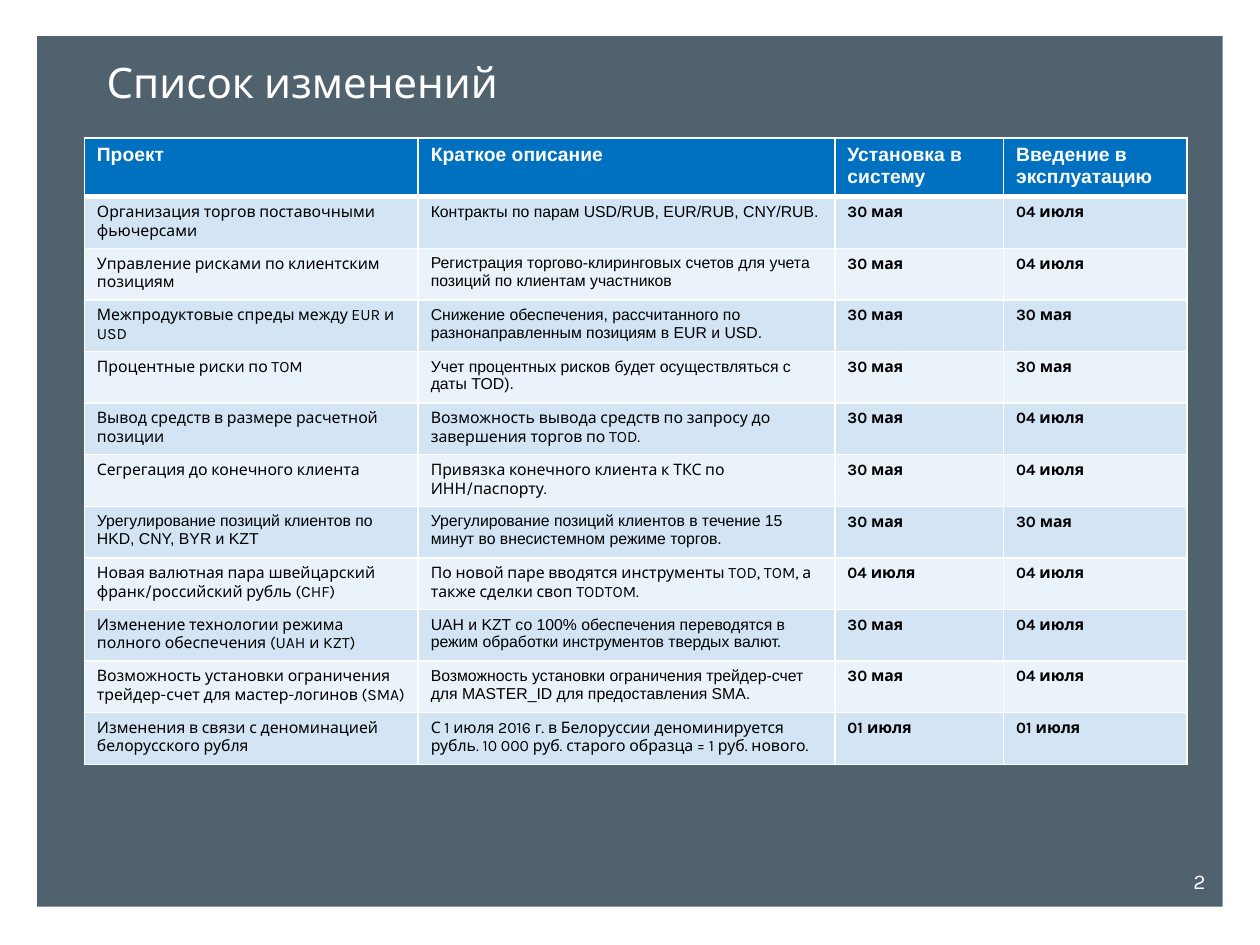
"""Build the slide listing system changes and their rollout dates."""
from lxml.etree import SubElement
from pptx import Presentation
from pptx.dml.color import RGBColor
from pptx.enum.shapes import MSO_SHAPE
from pptx.enum.text import MSO_ANCHOR, MSO_AUTO_SIZE, PP_ALIGN
from pptx.oxml.ns import qn
from pptx.util import Cm, Pt

TITLE = "Список изменений"
PAGE = "2"
HEADERS = ("Проект", "Краткое описание", "Установка в систему", "Введение в эксплуатацию")
MAY, JUNE_END, JULY = "30 мая", "01 июля", "04 июля"
CHANGES = [
    ("Организация торгов поставочными фьючерсами",
     "Контракты по парам USD/RUB, EUR/RUB, CNY/RUB.", MAY, JULY),
    ("Управление рисками по клиентским позициям",
     "Регистрация торгово-клиринговых счетов для учета позиций по клиентам участников", MAY, JULY),
    ("Межпродуктовые спреды между EUR и USD",
     "Снижение обеспечения, рассчитанного по разнонаправленным позициям в EUR и USD.", MAY, MAY),
    ("Процентные риски по TOM",
     "Учет процентных рисков будет осуществляться с даты TOD).", MAY, MAY),
    ("Вывод средств в размере расчетной позиции",
     "Возможность вывода средств по запросу до завершения торгов по TOD.", MAY, JULY),
    ("Сегрегация до конечного клиента",
     "Привязка конечного клиента к ТКС по ИНН/паспорту.", MAY, JULY),
    ("Урегулирование позиций клиентов по HKD, CNY, BYR и KZT",
     "Урегулирование позиций клиентов в течение 15 минут во внесистемном режиме торгов.", MAY, MAY),
    ("Новая валютная пара швейцарский франк/российский рубль (CHF)",
     "По новой паре вводятся инструменты TOD, TOM, а также сделки своп TODTOM.", JULY, JULY),
    ("Изменение технологии режима полного обеспечения (UAH и KZT)",
     "UAH и KZT со 100% обеспечения переводятся в режим обработки инструментов твердых валют.",
     MAY, JULY),
    ("Возможность установки ограничения трейдер-счет для мастер-логинов (SMA)",
     "Возможность установки ограничения трейдер-счет для MASTER_ID для предоставления SMA.",
     MAY, JULY),
    ("Изменения в связи с деноминацией белорусского рубля",
     "С 1 июля 2016 г. в Белоруссии деноминируется рубль. "
     "10 000 руб. старого образца = 1 руб. нового.", JUNE_END, JUNE_END),
]
ARIAL_CELLS = {(7, 0)} | {(row, 1) for row in (1, 2, 3, 4, 7, 9, 10)}
COL_WIDTHS = (6.73, 8.4, 3.4, 3.7)
ROW_HEIGHT = 1.04
THEME = {
    "font": "Karla", "table_font": "Arial",
    "title": 24, "page": 12, "header": 11, "body": 9,
    "panel": "51626F", "light": "FFFFFF", "dark": "000000",
    "head_fill": "0070C0", "bands": ("D3E4F5", "EAF2FA"),
    "rule": 1, "head_rule": 3,
}


def paint(shape, color):
    shape.fill.solid()
    shape.fill.fore_color.rgb = RGBColor.from_string(color)


def style(tf, size, color, font=THEME["font"], bold=False):
    for r in tf.paragraphs[0].runs:
        r.font.name, r.font.size, r.font.bold = font, Pt(size), bold
        r.font.color.rgb = RGBColor.from_string(color)


def set_borders(cell, top, bottom):
    tc_pr = cell._tc.get_or_add_tcPr()
    rule = THEME["rule"]
    for side, width in (("L", rule), ("R", rule), ("T", top), ("B", bottom)):
        ln = SubElement(tc_pr, qn(f"a:ln{side}"), w=str(Pt(width)))
        fill = SubElement(ln, qn("a:solidFill"))
        SubElement(fill, qn("a:srgbClr"), val=THEME["light"])


def add_panel(s):
    sp = s.shapes.add_shape(MSO_SHAPE.RECTANGLE, Cm(0.75), Cm(0.73), Cm(23.9), Cm(17.55))
    sp.shadow.inherit = False
    paint(sp, THEME["panel"])
    sp.line.fill.background()
    sp.element.getparent().insert(2, sp.element)


def add_title(s):
    sp = s.shapes.title
    sp.left, sp.top, sp.width, sp.height = Cm(1.1), Cm(1.12), Cm(15), Cm(1.6)
    tf = sp.text_frame
    tf.text = TITLE
    tf.auto_size = MSO_AUTO_SIZE.NONE
    tf.vertical_anchor = MSO_ANCHOR.TOP
    tf.margin_left = Cm(1.05)
    tf.paragraphs[0].alignment = PP_ALIGN.LEFT
    tf.paragraphs[0].line_spacing = 0.9
    style(tf, THEME["title"], THEME["light"])


def add_page_number(s):
    tf = s.shapes.add_textbox(Cm(23.3), Cm(17.2), Cm(1), Cm(1)).text_frame
    tf.text = PAGE
    tf.word_wrap = True
    tf.vertical_anchor = MSO_ANCHOR.MIDDLE
    tf.margin_right = tf.margin_bottom = 0
    tf.paragraphs[0].alignment = PP_ALIGN.RIGHT
    style(tf, THEME["page"], THEME["light"])


def add_changes(s):
    rows = [HEADERS, *CHANGES]
    table = s.shapes.add_table(len(rows), len(HEADERS), Cm(1.7), Cm(2.78),
                               Cm(sum(COL_WIDTHS)), Cm(ROW_HEIGHT * len(rows))).table
    for col, width in zip(table.columns, COL_WIDTHS):
        col.width = Cm(width)
    for i, texts in enumerate(rows):
        table.rows[i].height = Cm(ROW_HEIGHT)
        for j, text in enumerate(texts):
            cell = table.cell(i, j)
            cell.text_frame.text = text
            set_borders(cell, THEME["head_rule" if i == 1 else "rule"],
                        THEME["head_rule" if i == 0 else "rule"])
            if i == 0:
                paint(cell, THEME["head_fill"])
                style(cell.text_frame, THEME["header"], THEME["light"], THEME["table_font"], True)
            else:
                paint(cell, THEME["bands"][(i - 1) % 2])
                font = THEME["table_font" if (i, j) in ARIAL_CELLS else "font"]
                style(cell.text_frame, THEME["body"], THEME["dark"], font, j >= 2)


def main():
    prs = Presentation()
    prs.slide_width, prs.slide_height = Cm(25.4), Cm(19.05)
    s = prs.slides.add_slide(prs.slide_layouts.get_by_name("Title Only"))
    add_panel(s)
    add_title(s)
    add_page_number(s)
    add_changes(s)
    prs.save("out.pptx")


if __name__ == "__main__":
    main()
